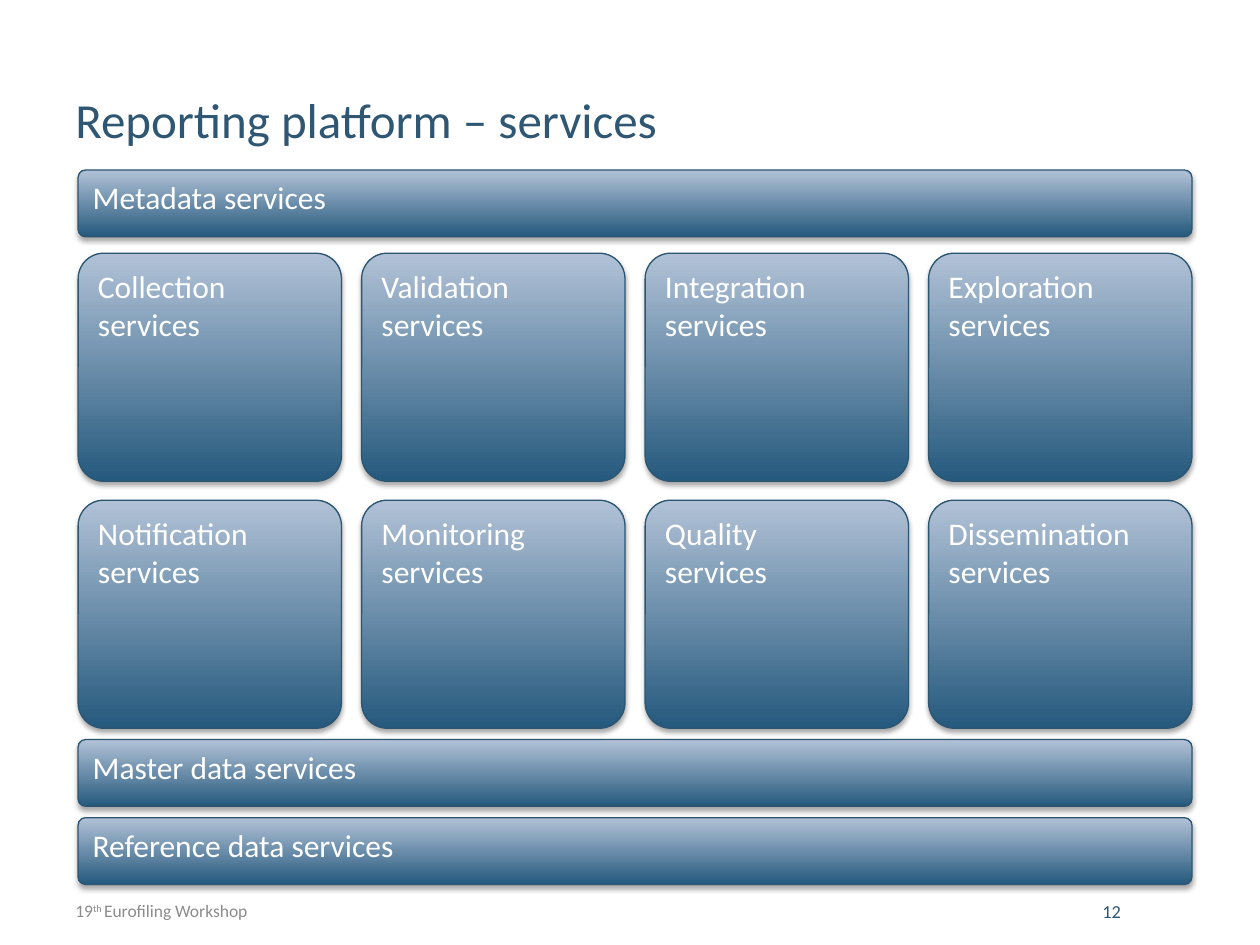
import pptx
import pptx.dml.color
import pptx.enum.shapes
import pptx.enum.text
import pptx.oxml
import pptx.oxml.ns
import pptx.util

FONT = "Calibri"
NAVY, GREY, WHITE = "2F5773", "8C8C8C", "FFFFFF"
BLOCK_BOTTOM, BLOCK_TOP, BLOCK_EDGE = "25597D", "B1C2D7", "2C5572"

BLOCK_LEFT, BLOCK_WIDTH = 0.62, 8.84
BAR_HEIGHT = 0.53
CARD_WIDTH, CARD_HEIGHT = 2.09, 1.81
CARD_ROW_PITCH = 1.96

CARD_ROWS = [
    ["Collection\nservices", "Validation\nservices", "Integration services", "Exploration\nservices"],
    ["Notification\nservices", "Monitoring services", "Quality\nservices", "Dissemination\nservices"],
]
BASE_BARS = ["Master data services", "Reference data services"]

SHADOW = (
    f'<a:outerShdw {pptx.oxml.ns.nsdecls("a")} blurRad="{pptx.util.Pt(3.1)}" '
    f'dist="{pptx.util.Pt(1.8)}" dir="5400000" rotWithShape="0">'
    '<a:srgbClr val="000000"><a:alpha val="35000"/></a:srgbClr></a:outerShdw>'
)


def color(hex_string):
    return pptx.dml.color.RGBColor.from_string(hex_string)


def inches(box):
    return [pptx.util.Inches(length) for length in box]


def style(paragraph, size, hex_string, align):
    paragraph.alignment = align
    paragraph.font.name = FONT
    paragraph.font.size = pptx.util.Pt(size)
    paragraph.font.color.rgb = color(hex_string)


def add_line(slide, box, runs, size, hex_string):
    """Place one line of text and return its runs."""
    frame = slide.shapes.add_textbox(*inches(box)).text_frame
    frame.word_wrap = True
    frame.vertical_anchor = pptx.enum.text.MSO_ANCHOR.MIDDLE
    paragraph = frame.paragraphs[0]
    for text in runs:
        paragraph.add_run().text = text
    style(paragraph, size, hex_string, pptx.enum.text.PP_ALIGN.JUSTIFY)
    return paragraph.runs


def add_block(slide, box, label):
    """Place a rounded, shaded service block."""
    block = slide.shapes.add_shape(
        pptx.enum.shapes.MSO_SHAPE.ROUNDED_RECTANGLE, *inches(box))
    block.adjustments[0] = 0.112
    block.fill.gradient()
    block.fill.gradient_angle = 90
    for stop, shade in zip(block.fill.gradient_stops, (BLOCK_BOTTOM, BLOCK_TOP)):
        stop.color.rgb = color(shade)
    block.line.color.rgb = color(BLOCK_EDGE)
    block.line.width = pptx.util.Pt(0.75)
    block.shadow.inherit = False
    effects = block._element.spPr.find(pptx.oxml.ns.qn("a:effectLst"))
    effects.append(pptx.oxml.parse_xml(SHADOW))

    frame = block.text_frame
    frame.word_wrap = True
    frame.vertical_anchor = pptx.enum.text.MSO_ANCHOR.TOP
    frame.text = label
    for paragraph in frame.paragraphs:
        style(paragraph, 18, WHITE, pptx.enum.text.PP_ALIGN.LEFT)


def add_bars(slide, left, top, width, pitch, labels):
    for row, label in enumerate(labels):
        add_block(slide, (left, top + row * pitch, width, BAR_HEIGHT), label)


def add_cards(slide, left, top, width, rows):
    column_pitch = (width - CARD_WIDTH) / (len(rows[0]) - 1)
    for row, labels in enumerate(rows):
        for column, label in enumerate(labels):
            add_block(slide, (left + column * column_pitch, top + row * CARD_ROW_PITCH,
                              CARD_WIDTH, CARD_HEIGHT), label)


def add_footer(slide, left, top, height):
    event = add_line(slide, (left, top, 5.38, height),
                     ["19", "th ", "Eurofiling Workshop"], 10, GREY)
    event[1].font._element.set("baseline", "30000")
    add_line(slide, (left + 8.15, top, 0.85, height), ["12"], 10.5, NAVY)


def main():
    deck = pptx.Presentation()
    deck.slide_width, deck.slide_height = inches((10, 7.5))
    slide = deck.slides.add_slide(deck.slide_layouts[6])

    add_line(slide, (0.5, 0.64, 7.29, 0.61), ["Reporting platform – services"], 28, NAVY)
    add_bars(slide, BLOCK_LEFT, 1.35, BLOCK_WIDTH, 0, ["Metadata services"])
    add_cards(slide, BLOCK_LEFT, 2.01, BLOCK_WIDTH, CARD_ROWS)
    add_bars(slide, BLOCK_LEFT, 5.87, BLOCK_WIDTH, 0.62, BASE_BARS)
    add_footer(slide, 0.5, 7.11, 0.24)

    deck.save("out.pptx")


if __name__ == "__main__":
    main()
